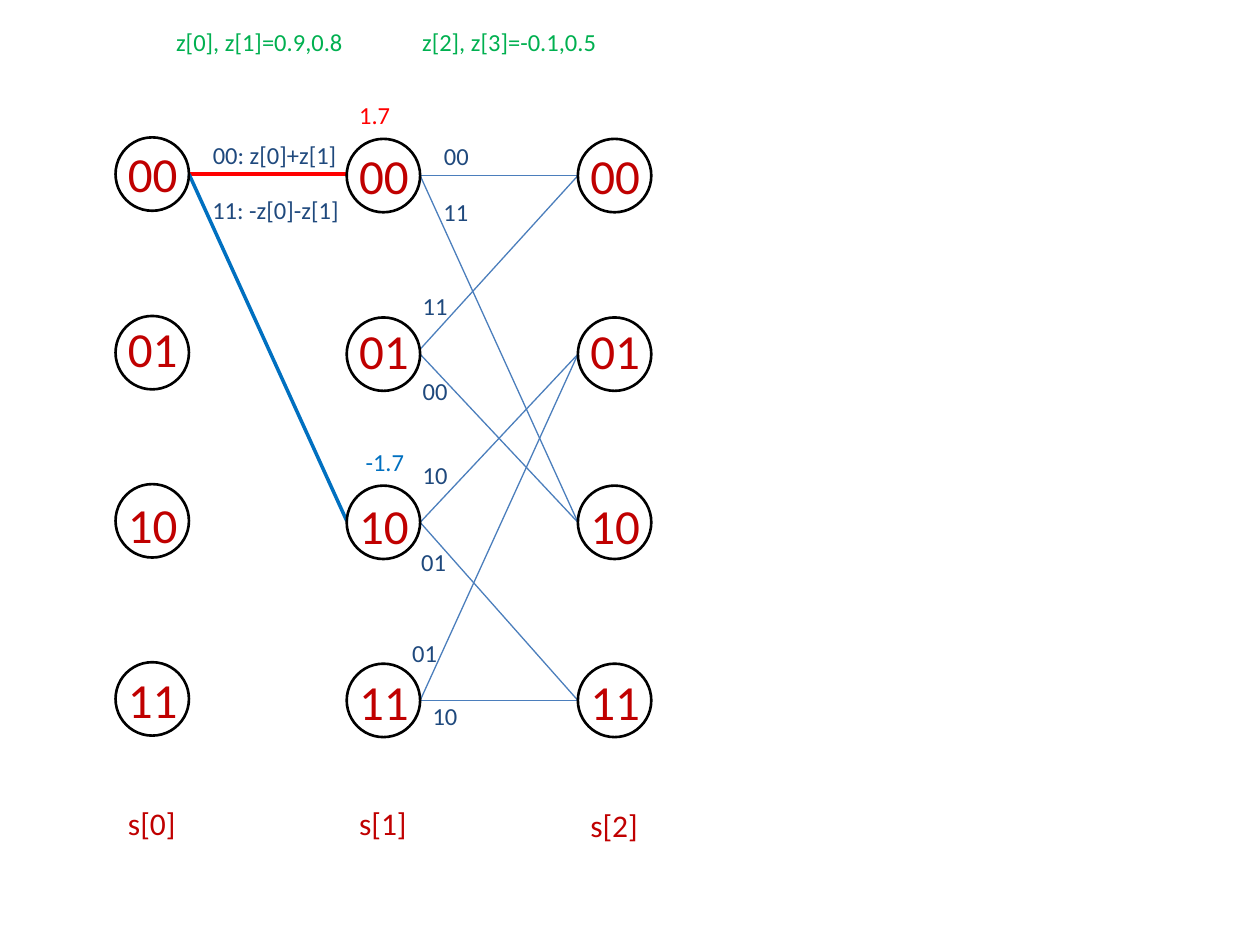
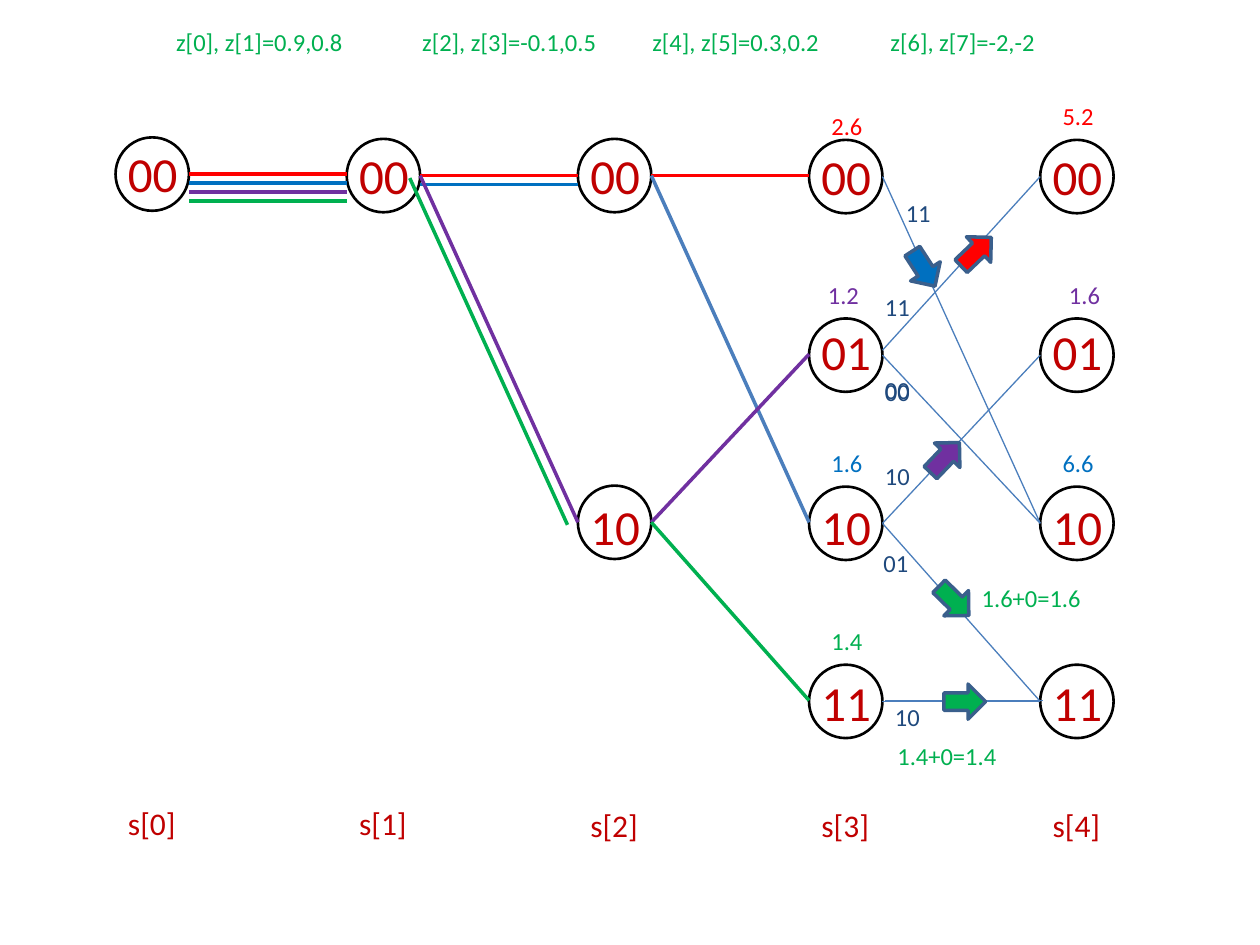
from lxml import etree
from pptx import Presentation
from pptx.dml.color import RGBColor
from pptx.enum import shapes, text
from pptx.oxml import ns
from pptx.util import Cm, Pt

FONT = "Calibri"
BLACK, CRIMSON, NAVY = "000000", "C00000", "1F497D"
RED, BLUE, PURPLE, GREEN = "FF0000", "0070C0", "7030A0", "00B050"
BRANCH_BLUE, ARROW_EDGE = "4B7EBC", "3A5F8C"

NODE = 1.48
STAGE_LEFT, STAGE_STEP = 2.33, 4.66
STAGE_TOPS = [2.77, 2.8, 2.8, 2.82, 2.82]
NAME_TOPS = [16.08, 16.08, 16.13, 16.13, 16.13]
ROW_OFFSETS = [0, 3.6, 6.99, 10.58]
STATES = ["00", "01", "10", "11"]
TEXT_PITCH, TEXT_LINE = 100.8, 34.2
TRACK_GAP = 0.18
THIN, THICK = 0.75, 2

INPUTS = [
    ("z[0], z[1]=0.9,0.8", 3.3, 3.89),
    ("z[2], z[3]=-0.1,0.5", 8.26, 4.04),
    ("z[4], z[5]=0.3,0.2", 12.9, 3.89),
    ("z[6], z[7]=-2,-2", 17.7, 3.43),
]
BRANCHES = [
    (0, 0, "00", 0.23, -0.08),
    (0, 2, "11", 0.22, 1.04),
    (1, 0, "11", -0.2, 2.95),
    (1, 2, "00", -0.2, 4.65),
    (2, 1, "10", -0.2, 6.35),
    (2, 3, "01", -0.23, 8.1),
    (3, 3, "10", 0, 11.2),
    (3, 1, "01", -0.41, 9.93),
]


def color(value):
    """Turn a hex string into a colour."""
    return RGBColor.from_string(value)


def stage_origin(stage):
    """Return the left and top of a stage's column of nodes."""
    return STAGE_LEFT + STAGE_STEP * stage, STAGE_TOPS[stage]


def branch_origin(stage):
    """Return the left and top of the region to the right of a stage."""
    left, top = stage_origin(stage)
    return left + NODE, top


def add_text(page, lines, left, top, width, height, size, ink, gaps=()):
    """Add unwrapped lines of text, with optional space before later ones."""
    box = page.shapes.add_textbox(Cm(left), Cm(top), Cm(width), Cm(height))
    frame = box.text_frame
    frame.word_wrap = False
    frame.auto_size = text.MSO_AUTO_SIZE.SHAPE_TO_FIT_TEXT
    for index, line in enumerate(lines):
        para = frame.add_paragraph() if index else frame.paragraphs[0]
        if index:
            para.space_before = Pt(gaps[index - 1])
        span = para.add_run()
        span.text = line
        span.font.name = FONT
        span.font.size = Pt(size)
        span.font.color.rgb = color(ink)


def add_label(page, words, left, top, width, ink):
    """Add a small one-line label."""
    add_text(page, [words], left, top, width, 0.86, 14, ink)


def add_stage(page, stage, rows):
    """Add a column of state nodes with the stage name below."""
    left, top = stage_origin(stage)
    steps = [after - before for before, after in zip(rows, rows[1:])]
    gaps = [TEXT_PITCH * step - TEXT_LINE for step in steps]
    add_text(page, [STATES[row] for row in rows], left, top,
             1.52, 1.45 + 3.59 * rows[-1], 28, CRIMSON, gaps)
    for row in rows:
        node = page.shapes.add_shape(
            shapes.MSO_SHAPE.OVAL, Cm(left), Cm(top + ROW_OFFSETS[row]),
            Cm(NODE), Cm(NODE))
        node.shadow.inherit = False
        node.fill.background()
        node.line.color.rgb = color(BLACK)
        node.line.width = Pt(1.5)
    add_text(page, [f"s[{stage}]"], left, NAME_TOPS[stage],
             1.47, 1.02, 18, CRIMSON)


def add_branch(page, stage, start, end, ink, weight=THICK, dx=0, dy=0, start_dy=0):
    """Draw a branch from a state to a state of the next stage."""
    left, top = branch_origin(stage)
    left, middle = left + dx, top + NODE / 2 + dy
    line = page.shapes.add_connector(
        shapes.MSO_CONNECTOR.STRAIGHT,
        Cm(left), Cm(middle + ROW_OFFSETS[start] + start_dy),
        Cm(left + STAGE_STEP - NODE), Cm(middle + ROW_OFFSETS[end]))
    line.line.color.rgb = color(ink)
    line.line.width = Pt(weight)
    etree.SubElement(line._element.spPr, ns.qn("a:effectLst"))


def add_trellis(page, stage, branches):
    """Draw all thin branches leaving a stage, with their code bits."""
    left, top = branch_origin(stage)
    for start, end, code, dx, dy in branches:
        lift = -0.1 if (start, end) == (1, 0) else 0
        add_branch(page, stage, start, end, BRANCH_BLUE, THIN, start_dy=lift)
        add_label(page, code, left + dx, top + dy, 1.02, NAVY)


def add_metric(page, stage, row, value, ink, dx=0.2, dy=-0.9, width=1.14):
    """Write a path metric above a node."""
    left, top = stage_origin(stage)
    add_label(page, value, left + dx, top + ROW_OFFSETS[row] + dy, width, ink)


def add_inputs(page, count):
    """Write the received values across the top."""
    for words, left, width in INPUTS[:count]:
        add_label(page, words, left, 0.43, width, GREEN)


def add_survivor_arrow(page, stage, dx, dy, turn, fill):
    """Place a block arrow on a branch leaving a stage."""
    left, top = branch_origin(stage)
    arrow = page.shapes.add_shape(
        shapes.MSO_SHAPE.RIGHT_ARROW, Cm(left + dx), Cm(top + dy),
        Cm(0.84), Cm(0.71))
    arrow.rotation = turn
    arrow.shadow.inherit = False
    arrow.fill.solid()
    arrow.fill.fore_color.rgb = color(fill)
    arrow.line.color.rgb = color(ARROW_EDGE)
    arrow.line.width = Pt(2)


def build_first_steps(page):
    """Show the first two stages of decoding."""
    add_trellis(page, 1, BRANCHES)
    add_branch(page, 0, 0, 0, RED)
    add_branch(page, 0, 0, 2, BLUE)
    for stage in range(3):
        add_stage(page, stage, range(4))
    left, top = branch_origin(0)
    sums = [("00: z[0]+z[1]", 3.02), ("11: -z[0]-z[1]", 3.07)]
    for (words, width), (_, _, _, dx, dy) in zip(sums, BRANCHES):
        add_label(page, words, left + dx, top + dy, width, NAVY)
    add_metric(page, 1, 0, "1.7", RED, dx=0)
    add_metric(page, 1, 2, "-1.7", BLUE, dx=0.13, width=1.3)
    add_inputs(page, 2)


def build_survivors(page):
    """Show the surviving paths and the choice at the last stage."""
    for stage, rows in enumerate([[0], [0], [0, 2], range(4), range(4)]):
        add_stage(page, stage, rows)
    add_inputs(page, 4)

    for track, ink in enumerate([RED, BLUE, PURPLE, GREEN]):
        add_branch(page, 0, 0, 0, ink, dy=TRACK_GAP * track)
    for track, ink in enumerate([RED, BLUE]):
        add_branch(page, 1, 0, 0, ink, dy=TRACK_GAP * track)
    add_branch(page, 1, 0, 2, PURPLE)
    add_branch(page, 1, 0, 2, GREEN, dx=-0.21, dy=0.05)
    for start, end, ink in [(0, 0, RED), (0, 2, BRANCH_BLUE),
                            (2, 1, PURPLE), (2, 3, GREEN)]:
        add_branch(page, 2, start, end, ink)

    add_trellis(page, 3, BRANCHES[1:-1])
    add_branch(page, 3, 3, 3, BRANCH_BLUE, THIN, dx=0.05, dy=-0.02)

    add_metric(page, 3, 0, "2.6", RED, dy=-0.71)
    add_metric(page, 3, 1, "1.2", PURPLE, dx=0.13)
    add_metric(page, 3, 2, "1.6", BLUE)
    add_metric(page, 3, 3, "1.4", GREEN)
    add_metric(page, 4, 0, "5.2", RED)
    add_metric(page, 4, 1, "1.6", PURPLE, dx=0.33)
    add_metric(page, 4, 2, "6.6", BLUE)

    for dx, dy, turn, ink in [
        (1.47, 1.9, 316.4, RED),
        (0.84, 6.05, 313.8, PURPLE),
        (0.41, 2.24, 57.1, BLUE),
        (1.02, 8.94, 44.3, GREEN),
        (1.24, 10.97, 0, GREEN),
    ]:
        add_survivor_arrow(page, 3, dx, dy, turn, ink)

    left, top = branch_origin(3)
    for words, dx, dy, width, ink in [
        ("00", -0.2, 4.62, 1.02, NAVY),
        ("1.4+0=1.4", 0.05, 11.99, 2.54, GREEN),
        ("1.6+0=1.6", 1.75, 8.81, 2.54, GREEN),
    ]:
        add_label(page, words, left + dx, top + dy, width, ink)


def main():
    """Build and save the deck."""
    deck = Presentation()
    deck.slide_width, deck.slide_height = Cm(25.4), Cm(19.05)
    for build in (build_first_steps, build_survivors):
        build(deck.slides.add_slide(deck.slide_layouts[6]))
    deck.save("out.pptx")


if __name__ == "__main__":
    main()
